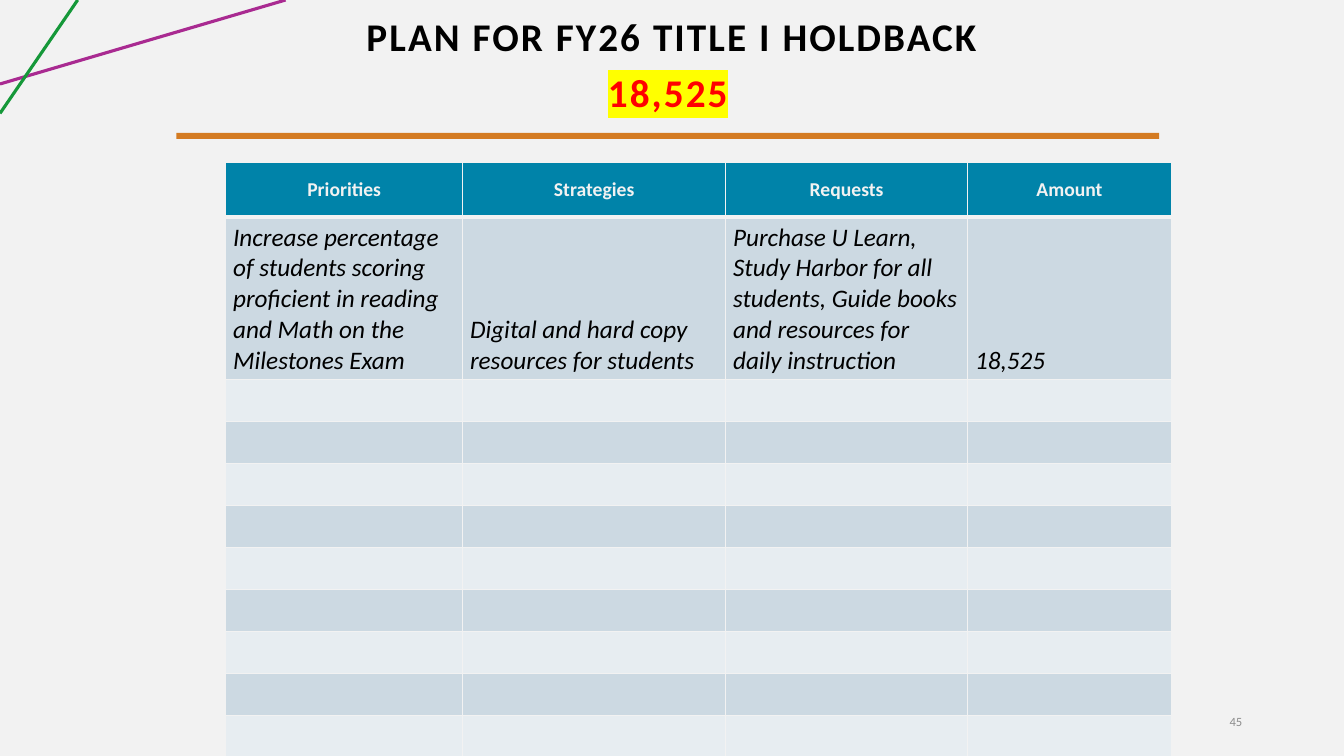
import pptx
import pptx.dml.color
import pptx.enum.shapes
import pptx.enum.text
import pptx.oxml
import pptx.oxml.ns
import pptx.util
from lxml import etree

Pt = pptx.util.Pt
ALIGN = pptx.enum.text.PP_ALIGN
ANCHOR = pptx.enum.text.MSO_ANCHOR

BACKGROUND = "F2F2F2"
RULE = ((126, 95, 702, 4.3), "D47B22")
CORNER_LINES = [
    ((0, 60, 204, 0), "A92A91"),
    ((55.5, 0, 0, 81), "159839"),
]

HEADING = {"size": Pt(28), "bold": True}
TEXTS = [
    {"text": "PLAN FOR FY26 TITLE I HOLDBACK", "box": (66, 3, 828, 49), "color": "000000",
     "font": HEADING, "align": ALIGN.CENTER, "line_spacing": 0.9, "tracking": 150},
    {"text": "18,525", "box": (108.5, 34.5, 737, 66), "color": "FF0000", "font": HEADING,
     "align": ALIGN.CENTER, "line_spacing": 0.9, "tracking": 150, "highlight": "FFFF00"},
    {"text": "45", "box": (816.5, 500.5, 78, 29), "color": "8C8C8C",
     "font": {"size": Pt(9)}, "align": ALIGN.RIGHT},
]

HEADERS = ["Priorities", "Strategies", "Requests", "Amount"]
PLAN = [
    "Increase percentage of students scoring proficient in reading and Math on the Milestones Exam",
    "Digital and hard copy resources for students",
    "Purchase U Learn, Study Harbor for all students, Guide books and resources for daily instruction",
    "18,525",
]
EMPTY_ROWS = 9
TABLE_LEFT, TABLE_TOP = 161.3, 116.2
COLUMN_WIDTHS = [169.2, 187.9, 172.8, 145.6]
ROW_HEIGHTS = [38.6, 116.4] + [30] * EMPTY_ROWS
HEADER_FILL, BANDS = "0083A9", ["CCD9E2", "E7EDF1"]
HEADER_STYLE = {"color": "F2F2F2", "font": {"size": Pt(14), "bold": True}, "align": ALIGN.CENTER}
PLAN_STYLE = {"color": "000000", "font": {"size": Pt(18), "bold": False, "italic": True},
              "align": ALIGN.LEFT}
CELL_MARGINS = {"margin_left": Pt(5.3), "margin_right": Pt(5.3),
                "margin_top": Pt(2.7), "margin_bottom": Pt(2.7)}


def color(hex_value):
    return pptx.dml.color.RGBColor.from_string(hex_value)


def set_values(target, values):
    for name, value in values.items():
        setattr(target, name, value)


def paint(fill, hex_value):
    fill.solid()
    fill.fore_color.rgb = color(hex_value)


def add_color_child(parent, tag, hex_value):
    """Append a colour-holding element such as a:solidFill or a:highlight."""
    holder = etree.SubElement(parent, pptx.oxml.ns.qn(tag))
    etree.SubElement(holder, pptx.oxml.ns.qn("a:srgbClr"), val=hex_value)
    return holder


def write(frame, text, style):
    paragraph = frame.paragraphs[0]
    paragraph.alignment = style["align"]
    if "line_spacing" in style:
        paragraph.line_spacing = style["line_spacing"]
    run = paragraph.add_run()
    run.text = text
    set_values(run.font, {"name": "Calibri", **style["font"]})
    run.font.color.rgb = color(style["color"])
    properties = run.font._element
    if "tracking" in style:
        properties.set("spc", str(style["tracking"]))
    if "highlight" in style:
        highlight = add_color_child(properties, "a:highlight", style["highlight"])
        properties.find(pptx.oxml.ns.qn("a:latin")).addprevious(highlight)


def add_text(slide, item):
    frame = slide.shapes.add_textbox(*map(Pt, item["box"])).text_frame
    set_values(frame, {"word_wrap": True, "vertical_anchor": ANCHOR.MIDDLE})
    write(frame, item["text"], item)


def add_corner_line(slide, ends, hex_value):
    line = slide.shapes.add_connector(pptx.enum.shapes.MSO_CONNECTOR.STRAIGHT, *map(Pt, ends))
    line.line.width = Pt(2.25)
    line.line.color.rgb = color(hex_value)
    etree.SubElement(line._element.spPr, pptx.oxml.ns.qn("a:effectLst"))


def set_borders(cell, widths):
    """Draw the left, right, top and bottom borders, before the cell's fill is set."""
    properties = cell._tc.get_or_add_tcPr()
    for side, width in zip("LRTB", widths):
        border = etree.SubElement(properties, pptx.oxml.ns.qn(f"a:ln{side}"), w=str(Pt(width)))
        add_color_child(border, "a:solidFill", BACKGROUND)


def add_plan_table(slide):
    rows = [HEADERS, PLAN] + [[""] * len(HEADERS)] * EMPTY_ROWS
    table = slide.shapes.add_table(
        len(rows), len(HEADERS), Pt(TABLE_LEFT), Pt(TABLE_TOP),
        Pt(sum(COLUMN_WIDTHS)), Pt(sum(ROW_HEIGHTS))).table
    for column, width in zip(table.columns, COLUMN_WIDTHS):
        column.width = Pt(width)
    for index, (texts, height) in enumerate(zip(rows, ROW_HEIGHTS)):
        table.rows[index].height = Pt(height)
        is_header = index == 0
        for column, text in enumerate(texts):
            cell = table.cell(index, column)
            set_borders(cell, (1, 1, 3 if index == 1 else 1, 3 if is_header else 1))
            paint(cell.fill, HEADER_FILL if is_header else BANDS[(index - 1) % 2])
            anchor = ANCHOR.MIDDLE if is_header else ANCHOR.BOTTOM
            set_values(cell, {**CELL_MARGINS, "vertical_anchor": anchor})
            if text:
                write(cell.text_frame, text, HEADER_STYLE if is_header else PLAN_STYLE)


def main():
    presentation = pptx.Presentation()
    set_values(presentation, {"slide_width": Pt(960), "slide_height": Pt(540)})
    slide = presentation.slides.add_slide(presentation.slide_layouts[6])
    paint(slide.background.fill, BACKGROUND)
    for ends, hex_value in CORNER_LINES:
        add_corner_line(slide, ends, hex_value)
    add_plan_table(slide)
    for item in TEXTS:
        add_text(slide, item)
    box, hex_value = RULE
    rule = slide.shapes.add_shape(pptx.enum.shapes.MSO_SHAPE.RECTANGLE, *map(Pt, box))
    rule.shadow.inherit = False
    paint(rule.fill, hex_value)
    rule.line.fill.background()
    presentation.save("out.pptx")


if __name__ == "__main__":
    main()
